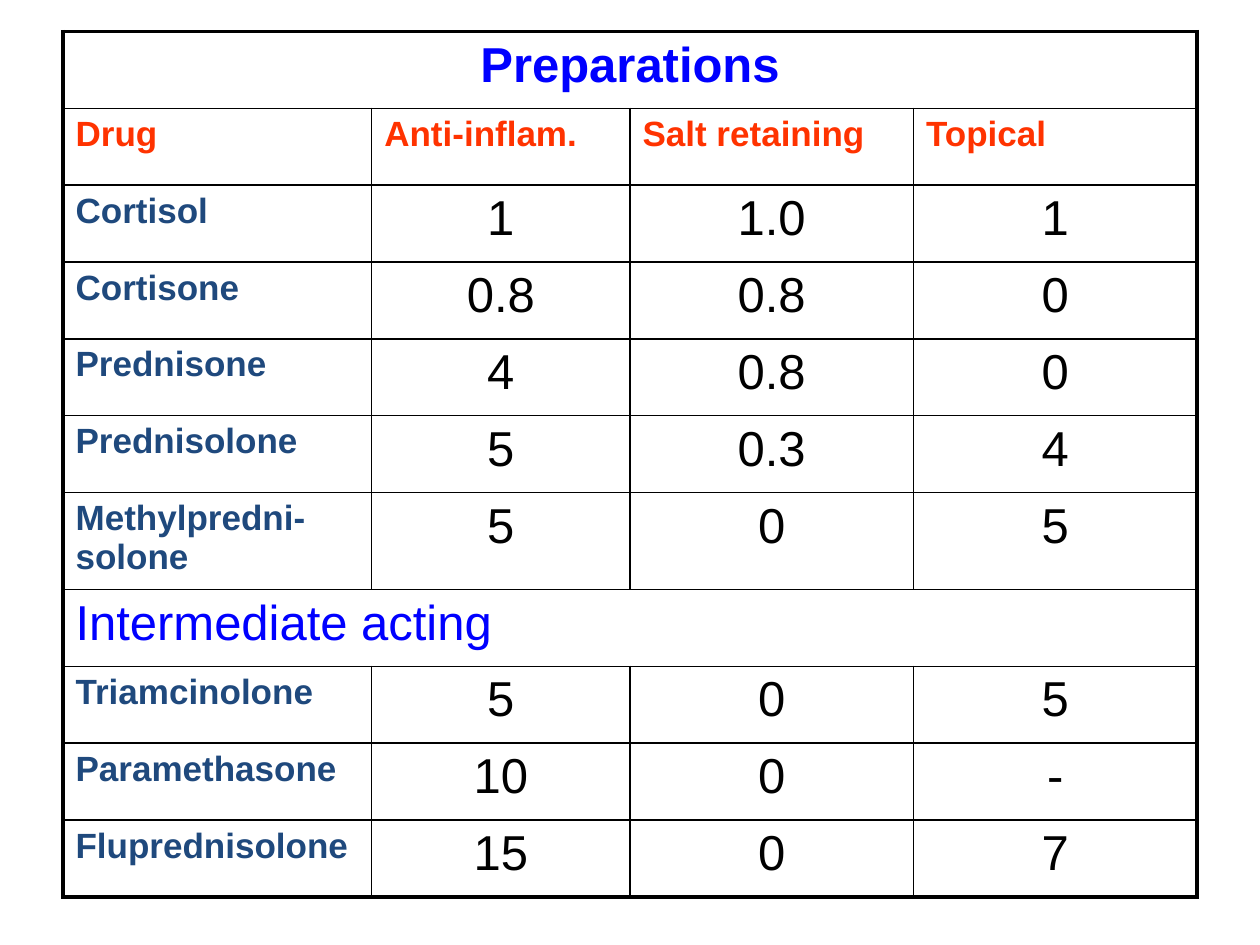
"""Build a slide with a table of steroid preparations and their relative potencies."""
from dataclasses import dataclass

from lxml import etree
from pptx import Presentation
from pptx.dml.color import RGBColor
from pptx.enum import text
from pptx.oxml import ns
from pptx.table import Table, _Cell
from pptx.util import Inches, Pt

BLUE = RGBColor(0x00, 0x00, 0xFF)
ORANGE = RGBColor(0xFF, 0x33, 0x00)
NAVY = RGBColor(0x1F, 0x49, 0x7D)
BLACK = RGBColor(0x00, 0x00, 0x00)
FONT = "Arial"
THIN, THICK = Pt(1), Pt(2.25)
COLUMN_WIDTHS = (2.45, 2.05, 2.25, 2.25)
ROW_HEIGHT, TALL_ROW_HEIGHT = 0.61, 0.77
HEADERS = ("Drug", "Anti-inflam.", "Salt retaining", "Topical")


@dataclass(frozen=True)
class Drug:
    name: str
    anti_inflammatory: str
    salt_retaining: str
    topical: str
    height: float = ROW_HEIGHT


SHORT_ACTING = (
    Drug("Cortisol", "1", "1.0", "1"),
    Drug("Cortisone", "0.8", "0.8", "0"),
    Drug("Prednisone", "4", "0.8", "0"),
    Drug("Prednisolone", "5", "0.3", "4"),
    Drug("Methylpredni- solone", "5", "0", "5", TALL_ROW_HEIGHT),
)
INTERMEDIATE_ACTING = (
    Drug("Triamcinolone", "5", "0", "5"),
    Drug("Paramethasone", "10", "0", "-"),
    Drug("Fluprednisolone", "15", "0", "7"),
)
FIRST_DRUG_ROW = 2
SECTION_ROW = FIRST_DRUG_ROW + len(SHORT_ACTING)
ROW_COUNT = SECTION_ROW + 1 + len(INTERMEDIATE_ACTING)


def write(cell: _Cell, words: str, *, size: int = 28, color: RGBColor = BLACK,
          bold: bool = False, centered: bool = False) -> None:
    paragraph = cell.text_frame.paragraphs[0]
    paragraph.alignment = text.PP_ALIGN.CENTER if centered else text.PP_ALIGN.LEFT
    run = paragraph.add_run()
    run.text = words
    run.font.name, run.font.size, run.font.bold = FONT, Pt(size), bold
    run.font.color.rgb = color


def add_border(cell: _Cell, side: str, width: int) -> None:
    properties = cell._tc.get_or_add_tcPr()
    line = etree.SubElement(properties, ns.qn(f"a:ln{side}"), w=str(int(width)))
    fill = etree.SubElement(line, ns.qn("a:solidFill"))
    etree.SubElement(fill, ns.qn("a:srgbClr"), val=str(BLACK))


def format_grid(table: Table) -> None:
    last_row, last_column = len(table.rows) - 1, len(table.columns) - 1
    for row in range(last_row + 1):
        for column in range(last_column + 1):
            cell = table.cell(row, column)
            right_column = column + cell.span_width - 1 if cell.is_merge_origin else column
            outer = {"L": column == 0, "R": right_column == last_column,
                     "T": row == 0, "B": row == last_row}
            inside_span = cell.is_spanned
            for side, is_outer in outer.items():
                if is_outer or side in "TB" or not inside_span:
                    add_border(cell, side, THICK if is_outer else THIN)
            cell.fill.background()


def add_drugs(table: Table, first_row: int, drugs: tuple[Drug, ...]) -> None:
    for row, drug in enumerate(drugs, first_row):
        table.rows[row].height = Inches(drug.height)
        write(table.cell(row, 0), drug.name, size=20, color=NAVY, bold=True)
        values = (drug.anti_inflammatory, drug.salt_retaining, drug.topical)
        for column, value in enumerate(values, 1):
            write(table.cell(row, column), value, centered=True)


def main() -> None:
    presentation = Presentation()
    presentation.slide_width, presentation.slide_height = Inches(10), Inches(7.5)
    slide = presentation.slides.add_slide(presentation.slide_layouts[6])
    frame = slide.shapes.add_table(ROW_COUNT, len(HEADERS), Inches(0.5), Inches(0.25),
                                   Inches(9), Inches(6.87))
    table = frame.table
    table.first_row = table.horz_banding = False
    for column, width in zip(table.columns, COLUMN_WIDTHS):
        column.width = Inches(width)
    for row in table.rows:
        row.height = Inches(ROW_HEIGHT)
    for row in (0, SECTION_ROW):
        table.cell(row, 0).merge(table.cell(row, len(HEADERS) - 1))

    write(table.cell(0, 0), "Preparations", color=BLUE, bold=True, centered=True)
    for column, header in enumerate(HEADERS):
        write(table.cell(1, column), header, size=20, color=ORANGE, bold=True)
    add_drugs(table, FIRST_DRUG_ROW, SHORT_ACTING)
    write(table.cell(SECTION_ROW, 0), "Intermediate acting", color=BLUE)
    add_drugs(table, SECTION_ROW + 1, INTERMEDIATE_ACTING)
    format_grid(table)
    presentation.save("out.pptx")


if __name__ == "__main__":
    main()
